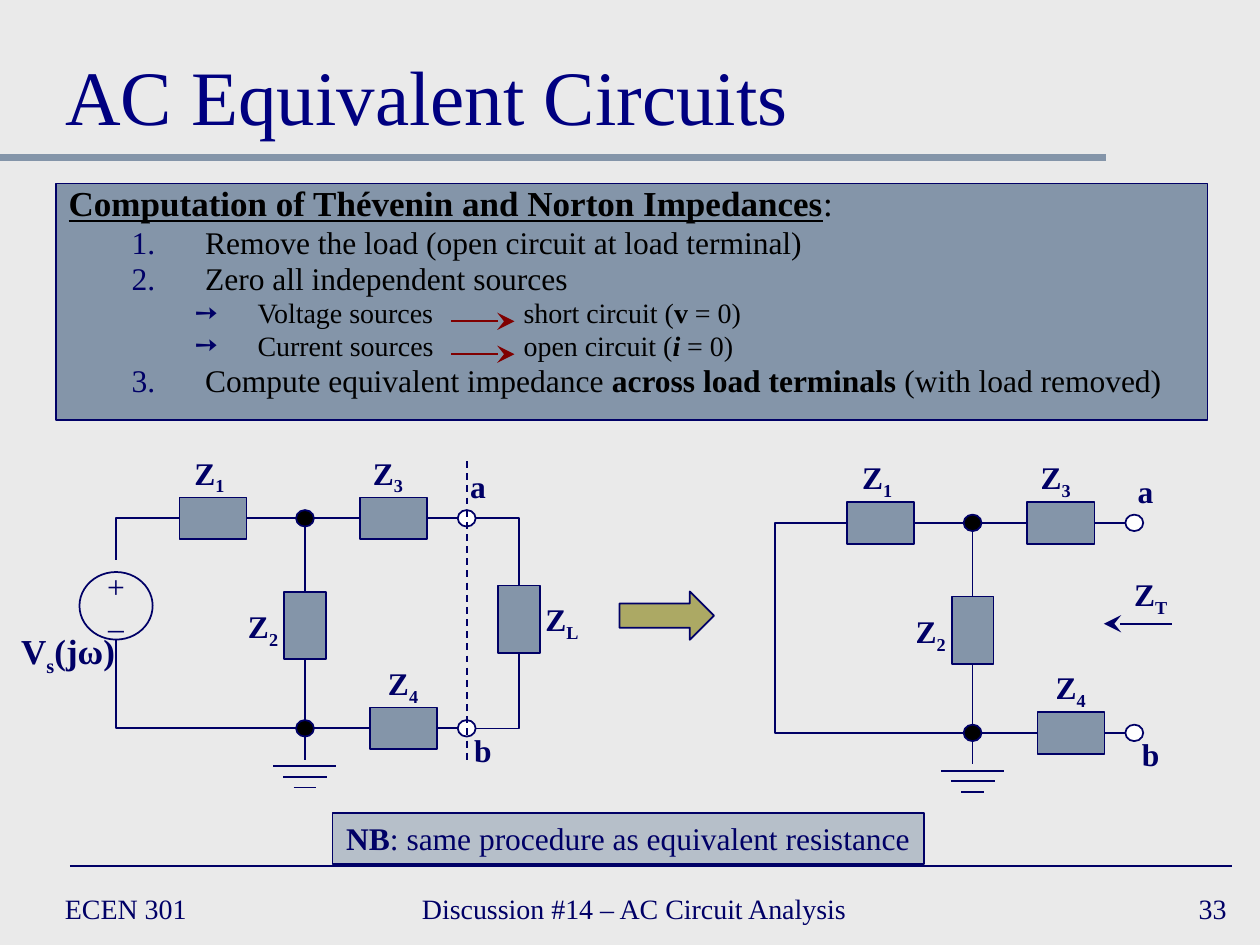
from lxml import etree
from pptx import Presentation
from pptx.dml.color import RGBColor
from pptx.enum import dml, shapes, text
from pptx.oxml import ns
from pptx.util import Pt

COLORS = {"back": "EAEAEA", "steel": "8495A9", "navy": "000066", "title": "000080",
          "black": "000000", "white": "FFFFFF", "maroon": "800000", "olive": "ACA964"}
RGB = {name: RGBColor.from_string(value) for name, value in COLORS.items()}
BOX, DOT = shapes.MSO_SHAPE.RECTANGLE, shapes.MSO_SHAPE.OVAL


def add_runs(paragraph, runs, size, color="navy"):
    """Append (text, style) runs; style letters: b, i, u and s for subscript."""
    for words, style in runs:
        run = paragraph.add_run()
        run.text = words
        font = run.font
        font.name, font.size = "Times New Roman", Pt(size)
        font.color.rgb = RGB[color]
        font.bold, font.italic, font.underline = "b" in style, "i" in style, "u" in style
        if "s" in style:
            run._r.get_or_add_rPr().set("baseline", "-25000")


def wire(canvas, points, origin=(0, 0), color="navy", width=1, arrow=False):
    """Draw a straight connector, or an open outline when there are corners."""
    points = [(Pt(origin[0] + x), Pt(origin[1] + y)) for x, y in points]
    if len(points) == 2:
        path = canvas.add_connector(shapes.MSO_CONNECTOR.STRAIGHT, *points[0], *points[1])
        etree.SubElement(path._element.spPr, ns.qn("a:effectLst"))
    else:
        outline = canvas.build_freeform(*points[0])
        outline.add_line_segments(points[1:], close=False)
        path = outline.convert_to_shape()
        path.fill.background()
        path.shadow.inherit = False
    path.line.color.rgb = RGB[color]
    path.line.width = Pt(width)
    if arrow:
        etree.SubElement(path.line._get_or_add_ln(), ns.qn("a:tailEnd"),
                         type="stealth", w="lg", len="lg")
    return path


prs = Presentation()
prs.slide_width, prs.slide_height = Pt(720), Pt(540)
slide = prs.slides.add_slide(prs.slide_layouts[1])
slide.background.fill.solid()
slide.background.fill.fore_color.rgb = RGB["back"]
title, steps = slide.placeholders

# Rules and footer
wire(slide.shapes, [(0, 90), (632, 90)], color="steel", width=4)
wire(slide.shapes, [(40, 495), (704, 495)])
for left, width, words, align in [
        (30, 156, "ECEN 301", text.PP_ALIGN.LEFT),
        (234, 276, "Discussion #14 – AC Circuit Analysis", text.PP_ALIGN.LEFT),
        (558, 150, "33", text.PP_ALIGN.RIGHT)]:
    footer = slide.shapes.add_textbox(Pt(left), Pt(504), Pt(width), Pt(30)).text_frame
    footer.word_wrap = True
    footer.vertical_anchor = text.MSO_ANCHOR.MIDDLE
    footer.paragraphs[0].alignment = align
    add_runs(footer.paragraphs[0], [(words, "")], 16)

# Title
title.left, title.top, title.width, title.height = Pt(30), Pt(12), Pt(660), Pt(72)
title.text_frame.vertical_anchor = text.MSO_ANCHOR.BOTTOM
title.text_frame.auto_size = text.MSO_AUTO_SIZE.NONE
title.text_frame.paragraphs[0].alignment = text.PP_ALIGN.LEFT
add_runs(title.text_frame.paragraphs[0], [("AC Equivalent Circuits", "")], 44, "title")

# Computation steps
steps.left, steps.top, steps.width, steps.height = Pt(32), Pt(105), Pt(658), Pt(135)
steps.fill.solid()
steps.fill.fore_color.rgb = RGB["steel"]
steps.line.color.rgb = RGB["navy"]
steps.line.width = Pt(0.75)
steps.text_frame.auto_size = text.MSO_AUTO_SIZE.NONE
steps.text_frame.vertical_anchor = text.MSO_ANCHOR.TOP
LEVELS = [  # size, left margin, hanging indent, bullet tag, bullet attributes
    (20, 48, 48, "a:buNone", {}),
    (18, 78, 42, "a:buAutoNum", {"type": "arabicPeriod"}),
    (16, 108, 36, "a:buChar", {"char": "➙"})]
lines = [
    (0, [("Computation of Thévenin and Norton Impedances", "bu"), (":", "")]),
    (1, [("Remove the load (open circuit at load terminal)", "")]),
    (1, [("Zero all independent sources", "")]),
    (2, [("Voltage sources\tshort circuit (", ""), ("v", "b"), (" = 0)", "")]),
    (2, [("Current sources\topen circuit (", ""), ("i", "bi"), (" = 0)", "")]),
    (1, [("Compute equivalent impedance ", ""), ("across load terminals", "b"),
         (" (with load removed)", "")])]
for index, (level, runs) in enumerate(lines):
    size, margin, hanging, bullet, attributes = LEVELS[level]
    step = steps.text_frame.paragraphs[0] if index == 0 else steps.text_frame.add_paragraph()
    step.level = level
    props = step._p.get_or_add_pPr()
    props.set("marL", str(Pt(margin)))
    props.set("indent", str(-Pt(hanging)))
    if level:
        bullet_color = etree.SubElement(props, ns.qn("a:buClr"))
        etree.SubElement(bullet_color, ns.qn("a:srgbClr"), val=COLORS["navy"])
    etree.SubElement(props, ns.qn(bullet), attributes)
    if level == 2:
        # Same column, whether stops count from the indent or from the box edge
        tabs = etree.SubElement(props, ns.qn("a:tabLst"))
        for stop in (260 - margin, 260):
            etree.SubElement(tabs, ns.qn("a:tab"), pos=str(Pt(stop)), algn="l")
    step.line_spacing = 0.8
    step.space_before = Pt(0.2 * size if index else 0)
    add_runs(step, runs, size, "black")
for y in (183.6, 202.4):
    wire(slide.shapes, [(258, y), (294, y)], color="maroon", arrow=True)

# Circuits: coordinates count from the upper node, 120 pt above the lower one
shared_wires = [
    [(-33, 0), (-5, 0)], [(5, 0), (31, 0)], [(70, 0), (87, 0)],
    [(0, 5), (0, 42)], [(0, 80), (0, 115)],
    [(5, 120), (37, 120)], [(75, 120), (87, 120)], [(0, 120), (0, 138)]]
shared_wires += [[(-half, y), (half, y)] for half, y in [(18, 141.6), (12.5, 147.7), (6.5, 153.8)]]
shared_parts = [  # kind, centre x, centre y, width, height, fill
    (BOX, -52.6, 0, 38.4, 23.8, "steel"), (BOX, 50.4, 0, 38.4, 23.8, "steel"),
    (BOX, 56.2, 120, 38.4, 23.8, "steel"), (BOX, 0, 61.3, 23.8, 38.4, "steel")]
shared_parts += [(DOT, x, y, 10.2, 9.4, fill)
                 for x, fill in [(0, "black"), (92.4, "white")] for y in (0, 120)]
shared_labels = [  # centre x, top, size, paragraphs of runs
    (x, y, 18, [[("Z", "b"), (sub, "bs")]])
    for x, y, sub in [(-54.6, -40.6, "1"), (47.4, -40.6, "3"), (-24, 47.3, "2"), (56, 79.6, "4")]]
shared_labels += [(98.8, -32.7, 18, [[("a", "b")]]), (101.7, 117.8, 18, [[("b", "b")]])]

source_circuit = (
    (174.3, 296.2),
    [[(-72, 0), (-108, 0), (-108, 24)], [(-108, 69.5), (-108, 120), (-5, 120)],
     [(97.5, 0), (122.4, 0), (122.4, 38.5)], [(122.4, 76.5), (122.4, 120), (97.5, 120)]],
    [(BOX, 122.4, 57.6, 23.8, 38.4, "steel"), (DOT, -108, 50, 41.8, 38.6, None)],
    [(146.8, 42.9, 18, [[("Z", "b"), ("L", "bs")]]),
     (-135.4, 60.2, 20, [[("V", "b"), ("s", "bs"), ("(jω)", "b")]]),
     (-108, 24.2, 18, [[("+", "")], [("–", "")]])])
reduced_circuit = (
    (555.8, 298.8),
    [[(-72, 0), (-113, 0), (-113, 120), (-5, 120)]],
    [],
    [(101.7, 26.4, 18, [[("Z", "b"), ("T", "bs")]])])

for origin, wires, parts, labels in (source_circuit, reduced_circuit):
    circuit = slide.shapes.add_group_shape().shapes
    for points in shared_wires + wires:
        wire(circuit, points, origin)
    for kind, x, y, width, height, fill in shared_parts + parts:
        part = circuit.add_shape(kind, Pt(origin[0] + x - width / 2),
                                 Pt(origin[1] + y - height / 2), Pt(width), Pt(height))
        part.shadow.inherit = False
        part.line.color.rgb = RGB["navy"]
        part.line.width = Pt(1)
        if fill:
            part.fill.solid()
            part.fill.fore_color.rgb = RGB[fill]
        else:
            part.fill.background()
    for x, y, size, paragraphs in shared_labels + labels:
        label = circuit.add_textbox(Pt(origin[0] + x - 35), Pt(origin[1] + y),
                                    Pt(70), Pt(29 * len(paragraphs))).text_frame
        label.word_wrap = False
        for index, runs in enumerate(paragraphs):
            line = label.add_paragraph() if index else label.paragraphs[0]
            line.alignment = text.PP_ALIGN.CENTER
            line.space_before = Pt(2 if index else 0)
            add_runs(line, runs, size)
    if origin == source_circuit[0]:
        load_cut = wire(circuit, [(92.4, -32.7), (92.4, 138)], origin)
        load_cut.line.dash_style = dml.MSO_LINE.DASH
    else:
        wire(circuit, [(113.8, 57.6), (75, 57.6)], origin, arrow=True)

# Arrow between the circuits
becomes = slide.shapes.add_shape(shapes.MSO_SHAPE.RIGHT_ARROW, Pt(354), Pt(338), Pt(54), Pt(27.6))
becomes.shadow.inherit = False
becomes.fill.solid()
becomes.fill.fore_color.rgb = RGB["olive"]
becomes.line.color.rgb = RGB["navy"]
becomes.line.width = Pt(1)

# Closing remark
remark = slide.shapes.add_textbox(Pt(190), Pt(464.4), Pt(338), Pt(29.5))
remark.fill.solid()
remark.fill.fore_color.rgb = RGB["steel"]
tint = remark._element.spPr.find(".//" + ns.qn("a:srgbClr"))
etree.SubElement(tint, ns.qn("a:alpha"), val="50000")
remark.line.color.rgb = RGB["navy"]
remark.line.width = Pt(1)
remark.text_frame.word_wrap = False
remark.text_frame.paragraphs[0].alignment = text.PP_ALIGN.CENTER
add_runs(remark.text_frame.paragraphs[0],
         [("NB", "b"), (": same procedure as equivalent resistance", "")], 18)

prs.save("out.pptx")
